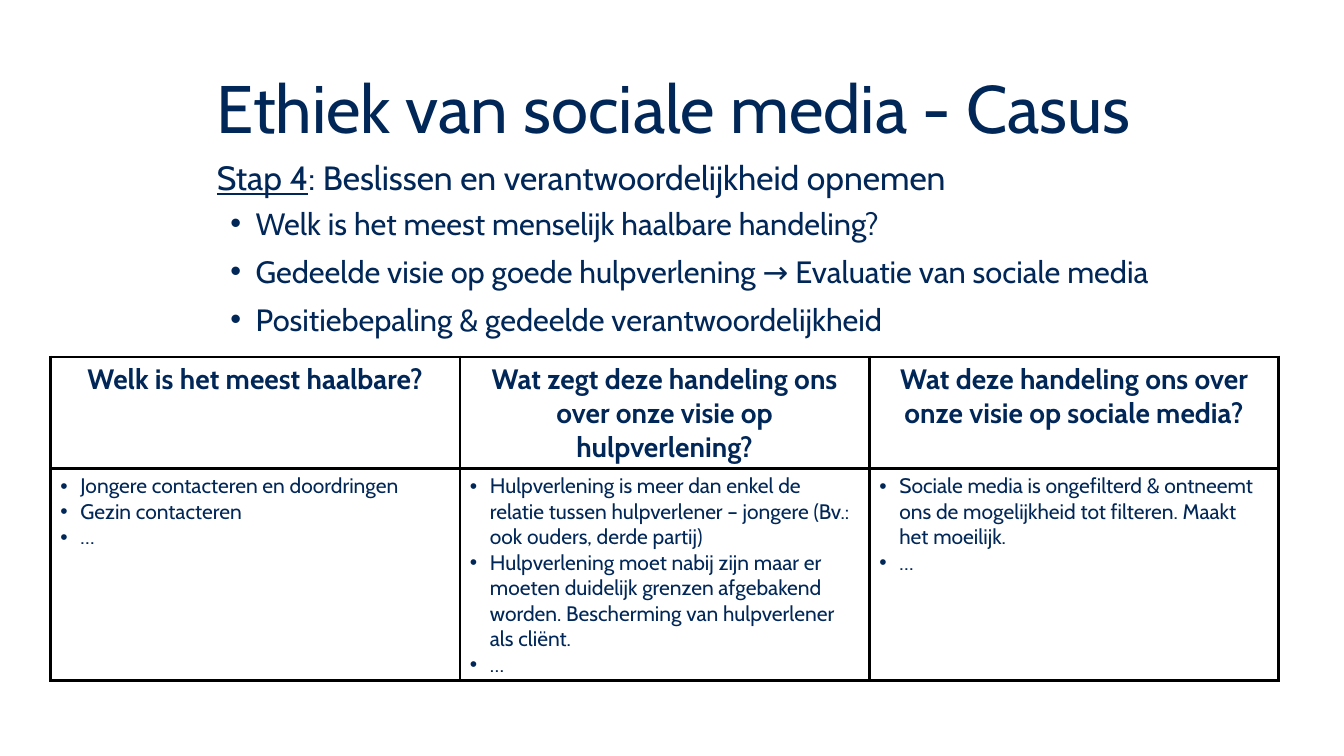
"""Build the slide on step 4 of the social media ethics case."""
from dataclasses import dataclass

from lxml import etree
from pptx import Presentation
from pptx.dml.color import RGBColor
from pptx.enum.text import MSO_ANCHOR, PP_ALIGN
from pptx.oxml.ns import qn
from pptx.util import Pt

PX = 9525
NAVY = RGBColor(0x00, 0x27, 0x57)
BLACK = RGBColor(0x00, 0x00, 0x00)
FONT = "Cabin"
MIDDLE = MSO_ANCHOR.MIDDLE
TOP = MSO_ANCHOR.TOP
CENTER = PP_ALIGN.CENTER
TITLE = "Ethiek van sociale media - Casus"
STEP = "Stap 4"
STEP_TEXT = ": Beslissen en verantwoordelijkheid opnemen"
TABLE_LEFT, TABLE_TOP, COLUMN_WIDTH = 48, 340, 390
ROW_HEIGHTS = (106, 202)
BORDER_WIDTH = 3


@dataclass(frozen=True)
class Question:
    text: str
    space_before: int


@dataclass(frozen=True)
class Column:
    heading: str
    answers: tuple[str, ...]


QUESTIONS = (
    Question("Welk is het meest menselijk haalbare handeling?", 5),
    Question("Gedeelde visie op goede hulpverlening → Evaluatie van sociale media", 8),
    Question("Positiebepaling & gedeelde verantwoordelijkheid", 8),
)
COLUMNS = (
    Column("Welk is het meest haalbare?",
           ("Jongere contacteren en doordringen", "Gezin contacteren", "…")),
    Column("Wat zegt deze handeling ons over onze visie op hulpverlening?",
           ("Hulpverlening is meer dan enkel de relatie tussen hulpverlener – jongere "
            "(Bv.: ook ouders, derde partij)",
            "Hulpverlening moet nabij zijn maar er moeten duidelijk grenzen afgebakend "
            "worden. Bescherming van hulpverlener als cliënt.",
            "…")),
    Column("Wat deze handeling ons over onze visie op sociale media?",
           ("Sociale media is ongefilterd & ontneemt ons de mogelijkheid tot filteren. "
            "Maakt het moeilijk.",
            "…")),
)


def format_runs(paragraph, size: int, bold: bool = False) -> None:
    """Give every run of a paragraph the slide's font and colour."""
    for run in paragraph.runs:
        run.font.name = FONT
        run.font.size = Pt(size)
        run.font.bold = bold
        run.font.color.rgb = NAVY


def add_bullet(paragraph, margin: int, hanging: int) -> None:
    """Add a bullet with a hanging indent."""
    properties = paragraph._p.get_or_add_pPr()
    properties.set("marL", str(margin * PX))
    properties.set("indent", str(-hanging * PX))
    etree.SubElement(properties, qn("a:buFont")).set("typeface", "Arial")
    etree.SubElement(properties, qn("a:buChar")).set("char", "•")


def add_text_frame(slide, left: int, top: int, width: int, height: int, anchor):
    """Add a wrapping text box and return its text frame."""
    shape = slide.shapes.add_textbox(left * PX, top * PX, width * PX, height * PX)
    shape.text_frame.word_wrap = True
    shape.text_frame.vertical_anchor = anchor
    return shape.text_frame


def add_title(slide) -> None:
    """Add the slide title."""
    paragraph = add_text_frame(slide, 197, 66, 1044, 80, MIDDLE).paragraphs[0]
    paragraph.text = TITLE
    paragraph.line_spacing = 0.9
    format_runs(paragraph, 48)


def add_step(slide) -> None:
    """Add the step with its bulleted questions."""
    text_frame = add_text_frame(slide, 197, 145, 1044, 498, TOP)
    paragraph = text_frame.paragraphs[0]
    paragraph.text = STEP
    paragraph.runs[0].font.underline = True
    paragraph.add_run().text = STEP_TEXT
    format_runs(paragraph, 24)
    for question in QUESTIONS:
        paragraph = text_frame.add_paragraph()
        paragraph.text = question.text
        paragraph.space_before = Pt(question.space_before)
        add_bullet(paragraph, 37, 24)
        format_runs(paragraph, 22)


def style_cell(cell) -> None:
    """Give a cell black borders and no fill."""
    properties = cell._tc.get_or_add_tcPr()
    for side in ("a:lnL", "a:lnR", "a:lnT", "a:lnB"):
        line = etree.SubElement(properties, qn(side), w=str(BORDER_WIDTH * PX))
        fill = etree.SubElement(line, qn("a:solidFill"))
        etree.SubElement(fill, qn("a:srgbClr"), val=str(BLACK))
    cell.fill.background()


def add_answer_table(slide) -> None:
    """Add the table of headings and bulleted answers."""
    table = slide.shapes.add_table(
        len(ROW_HEIGHTS), len(COLUMNS), TABLE_LEFT * PX, TABLE_TOP * PX,
        COLUMN_WIDTH * len(COLUMNS) * PX, sum(ROW_HEIGHTS) * PX).table
    table.horz_banding = False
    for row, height in zip(table.rows, ROW_HEIGHTS):
        row.height = height * PX
    for index, column in enumerate(COLUMNS):
        table.columns[index].width = COLUMN_WIDTH * PX
        heading_cell, answer_cell = table.cell(0, index), table.cell(1, index)
        style_cell(heading_cell)
        style_cell(answer_cell)
        heading = heading_cell.text_frame.paragraphs[0]
        heading.text = column.heading
        heading.alignment = CENTER
        format_runs(heading, 20, bold=True)
        answer_cell.text_frame.text = "\n".join(column.answers)
        for paragraph in answer_cell.text_frame.paragraphs:
            add_bullet(paragraph, 19, 19)
            format_runs(paragraph, 15)


def main() -> None:
    """Create and save the presentation."""
    presentation = Presentation()
    presentation.slide_width = 1280 * PX
    presentation.slide_height = 720 * PX
    slide = presentation.slides.add_slide(presentation.slide_layouts[6])
    add_step(slide)
    add_title(slide)
    add_answer_table(slide)
    presentation.save("out.pptx")


if __name__ == "__main__":
    main()
